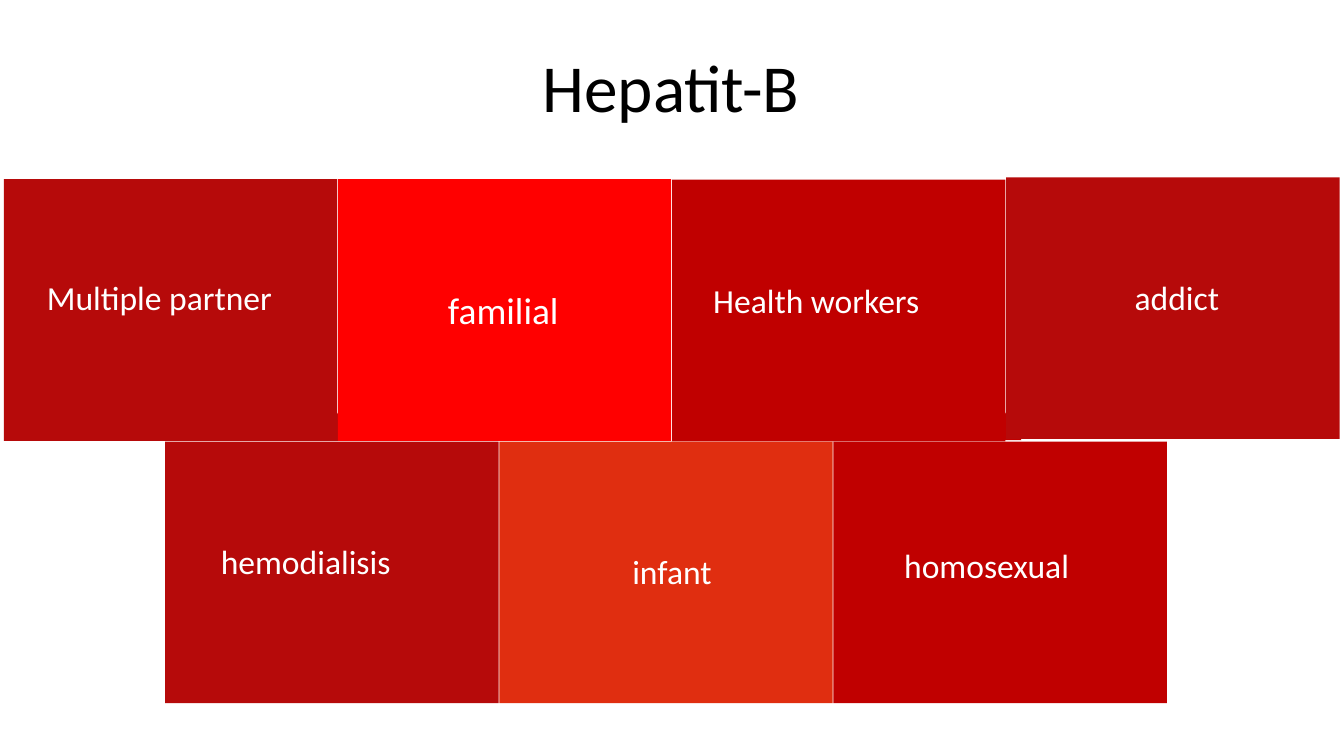
from pptx import Presentation
from pptx.dml.color import RGBColor
from pptx.enum.shapes import MSO_SHAPE
from pptx.enum.text import MSO_ANCHOR, PP_ALIGN
from pptx.util import Pt

BLACK = RGBColor(0x00, 0x00, 0x00)
WHITE = RGBColor(0xFF, 0xFF, 0xFF)
DARK_RED = RGBColor(0xB6, 0x0A, 0x0A)
DEEP_RED = RGBColor(0xC0, 0x00, 0x00)
BRIGHT_RED = RGBColor(0xFF, 0x00, 0x00)
ORANGE_RED = RGBColor(0xE0, 0x2E, 0x10)
FONT = "Calibri"
LEFT, CENTER = PP_ALIGN.LEFT, PP_ALIGN.CENTER

TITLE = "Hepatit-B"
TILE_WIDTH, TILE_HEIGHT, TILE_STEP = 178.6, 140.2, 179

# Each row: left edge of the first tile, then its tiles as
# (top, fill, label, label left, label top, label width, size, alignment)
ROWS = [
    (2, [
        (96, DARK_RED, "Multiple partner", 18, 144.9, 142, 18, LEFT),
        (96, BRIGHT_RED, "familial", 215.3, 150.5, 108.7, 20, CENTER),
        (96.3, DEEP_RED, "Health workers", 375, 146.3, 160, 18, LEFT),
        (95, DARK_RED, "addict", 553, 144.9, 155, 18, CENTER),
    ]),
    (88.5, [
        (236.6, DARK_RED, "hemodialisis", 100.8, 286.4, 126, 18, CENTER),
        (236.6, ORANGE_RED, "infant", 286, 291.8, 148, 18, CENTER),
        (236.6, DEEP_RED, "homosexual", 477.3, 288.5, 140, 18, LEFT),
    ]),
]
# Pointers on top of the second row: left, top, fill
POINTERS = [(166.5, 216.7, DARK_RED), (524.2, 216.3, DEEP_RED)]
POINTER_WIDTH, POINTER_HEIGHT = 23, 19.5


def add_solid(page, kind, left, top, width, height, fill):
    shape = page.shapes.add_shape(kind, Pt(left), Pt(top), Pt(width), Pt(height))
    shape.shadow.inherit = False
    shape.fill.solid()
    shape.fill.fore_color.rgb = fill
    shape.line.fill.background()


def write(frame, text, size, color, alignment):
    para = frame.paragraphs[0]
    para.alignment = alignment
    span = para.add_run()
    span.text = text
    span.font.name = FONT
    span.font.size = Pt(size)
    span.font.color.rgb = color


def add_label(page, text, left, top, width, size, alignment):
    box = page.shapes.add_textbox(Pt(left), Pt(top), Pt(width), Pt(size * 1.2 + 7.2))
    box.text_frame.word_wrap = True
    write(box.text_frame, text, size, WHITE, alignment)


deck = Presentation()
deck.slide_width, deck.slide_height = Pt(720), Pt(405)
page = deck.slides.add_slide(deck.slide_layouts[5])

title = page.shapes.title
title.left, title.top, title.width, title.height = Pt(30), Pt(26.6), Pt(659), Pt(39)
frame = title.text_frame
frame.margin_left = frame.margin_top = frame.margin_right = frame.margin_bottom = 0
frame.vertical_anchor = MSO_ANCHOR.MIDDLE
write(frame, TITLE, 36, BLACK, CENTER)

for left, top, fill in POINTERS:
    add_solid(page, MSO_SHAPE.ISOSCELES_TRIANGLE, left, top,
              POINTER_WIDTH, POINTER_HEIGHT, fill)

for row_left, tiles in ROWS:
    for column, (top, fill, *label) in enumerate(tiles):
        add_solid(page, MSO_SHAPE.RECTANGLE, row_left + column * TILE_STEP, top,
                  TILE_WIDTH, TILE_HEIGHT, fill)
        add_label(page, *label)

deck.save("out.pptx")
